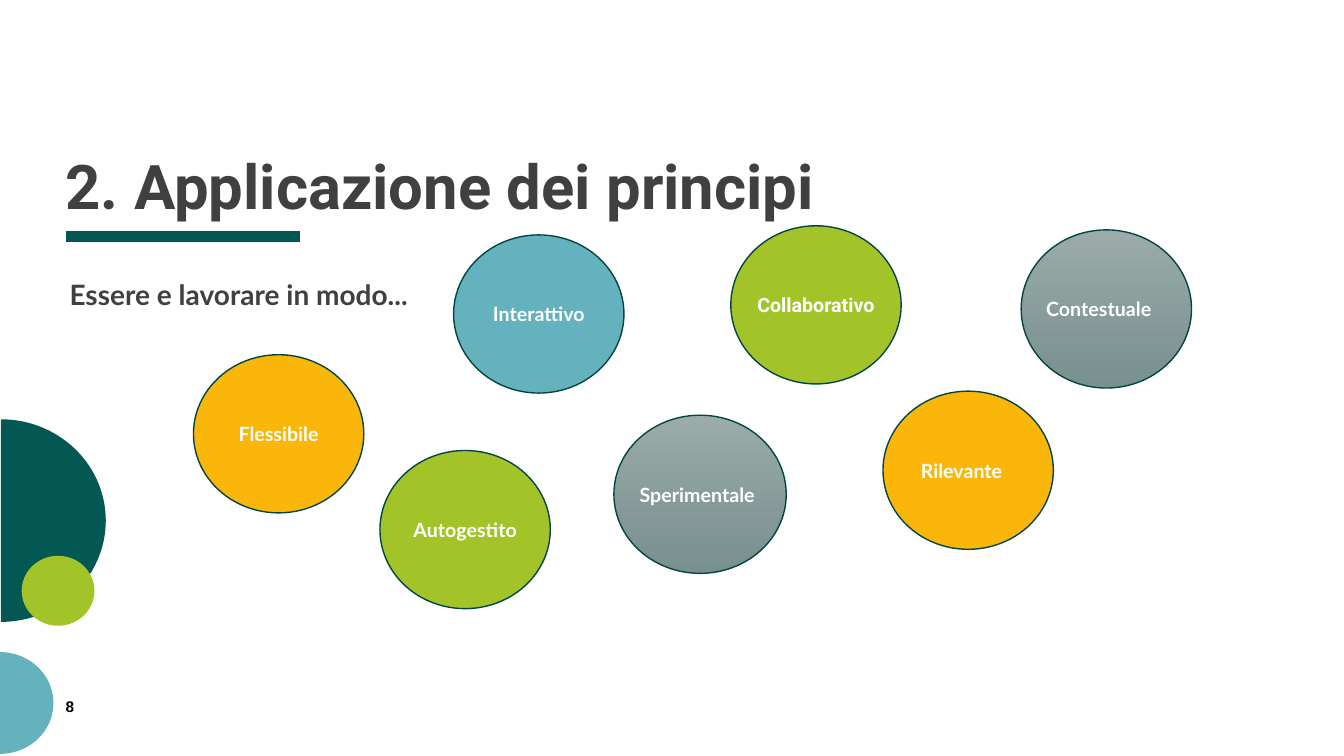
from math import cos, pi, sin
from lxml.etree import SubElement
from pptx import Presentation
from pptx.dml.color import RGBColor
from pptx.enum.shapes import MSO_CONNECTOR, MSO_SHAPE
from pptx.enum.text import MSO_ANCHOR, PP_ALIGN
from pptx.oxml.ns import qn
from pptx.util import Pt


def rgb(value):
    return RGBColor.from_string(value)


class Deck:
    """Holds the slide style and draws each kind of element, in points."""

    DARK, GREEN, BLUE, AMBER = "035854", "A3C429", "64B2BE", "FAB609"
    GREY = ("9AABA9", "78908E")
    OUTLINE, TEXT, WHITE, BLACK = "024643", "404040", "FFFFFF", "000000"

    def __init__(self, prs):
        self.s = prs.slides.add_slide(prs.slide_layouts[5])

    def set_text(self, tf, text, size, font, color, inset=0, spacing=None,
                 align=PP_ALIGN.LEFT, anchor=MSO_ANCHOR.TOP, wrap=True):
        tf.word_wrap = wrap
        tf.vertical_anchor = anchor
        tf.margin_left = tf.margin_right = Pt(inset)
        tf.margin_top = tf.margin_bottom = Pt(inset)
        p = tf.paragraphs[0]
        p.alignment = align
        if spacing:
            p.line_spacing = spacing
        r = p.add_run()
        r.text = text
        r.font.size, r.font.name, r.font.bold = Pt(size), font, True
        r.font.color.rgb = rgb(color)

    def paint(self, sp, fill, line=None):
        sp.shadow.inherit = False
        if isinstance(fill, tuple):
            sp.fill.gradient()
            sp.fill.gradient_angle = 270
            for stop, color in zip(sp.fill.gradient_stops, fill):
                stop.color.rgb = rgb(color)
        else:
            sp.fill.solid()
            sp.fill.fore_color.rgb = rgb(fill)
        if line:
            sp.line.color.rgb = rgb(line)
            sp.line.width = Pt(1)
        else:
            sp.line.fill.background()

    def title(self, text, x, y, w, h):
        sp = self.s.shapes.title
        sp.left, sp.top, sp.width, sp.height = Pt(x), Pt(y), Pt(w), Pt(h)
        self.set_text(sp.text_frame, text, 44, "Roboto", self.TEXT,
                      spacing=0.8, anchor=MSO_ANCHOR.BOTTOM)

    def text(self, text, x, y, w, h, size, font, color, **style):
        sp = self.s.shapes.add_textbox(Pt(x), Pt(y), Pt(w), Pt(h))
        self.set_text(sp.text_frame, text, size, font, color, **style)

    def rule(self, x, y, w):
        sp = self.s.shapes.add_connector(
            MSO_CONNECTOR.STRAIGHT, Pt(x), Pt(y), Pt(x + w), Pt(y))
        sp.line.color.rgb = rgb(self.DARK)
        sp.line.width = Pt(8)
        SubElement(sp._element.spPr, qn("a:effectLst"))

    def half_disc(self, x, y, w, h, fill, steps=60):
        angles = [pi * i / steps - pi / 2 for i in range(steps + 1)]
        points = [(Pt(x + w * cos(a)), Pt(y + h / 2 * (1 + sin(a))))
                  for a in angles]
        fb = self.s.shapes.build_freeform(*points[0])
        fb.add_line_segments(points[1:])
        self.paint(fb.convert_to_shape(), fill)

    def ellipse(self, x, y, w, h, fill, line=None):
        sp = self.s.shapes.add_shape(
            MSO_SHAPE.OVAL, Pt(x), Pt(y), Pt(w), Pt(h))
        self.paint(sp, fill, line)
        return sp

    def principle(self, text, x, y, fill, font="Lato", w=121.7, shift=0):
        sp = self.ellipse(x, y, w, 113, fill, self.OUTLINE)
        self.set_text(sp.text_frame, text, 14, font, self.WHITE, wrap=False,
                      align=PP_ALIGN.CENTER, anchor=MSO_ANCHOR.MIDDLE)
        sp.text_frame.margin_right = Pt(2 * shift)


def main():
    prs = Presentation()
    prs.slide_width, prs.slide_height = Pt(960), Pt(540)
    d = Deck(prs)
    d.rule(46.8, 169.2, 167.8)
    d.half_disc(0.7, 299.5, 74.9, 144.7, d.DARK)
    d.half_disc(0, 465.8, 38.2, 72.7, d.BLUE)
    d.ellipse(15.5, 397, 52, 50, d.GREEN)
    d.title("2. Applicazione dei principi", 46.8, 25.9, 856, 132.5)
    d.principle("Collaborativo", 522, 161.3, d.GREEN, font="Roboto")
    d.principle("Sperimentale", 438.5, 296.6, d.GREY, w=123.1, shift=2)
    d.principle("Flessibile", 138.2, 253.4, d.AMBER)
    d.principle("Autogestito", 271.4, 321.8, d.GREEN)
    d.principle("Contestuale", 729.4, 164.2, d.GREY, shift=5.4)
    d.principle("Rilevante", 630.7, 279.4, d.AMBER, shift=4.7)
    d.principle("Interattivo", 324, 167.8, d.BLUE)
    d.text("8", 46.8, 498.2, 10, 13.7, 11, "Arial", d.BLACK)
    d.text("Essere e lavorare in modo...", 46.1, 197.3, 277.2, 28.8,
           20, "Lato", d.TEXT, inset=3.6, spacing=0.9)
    prs.save("out.pptx")


if __name__ == "__main__":
    main()
